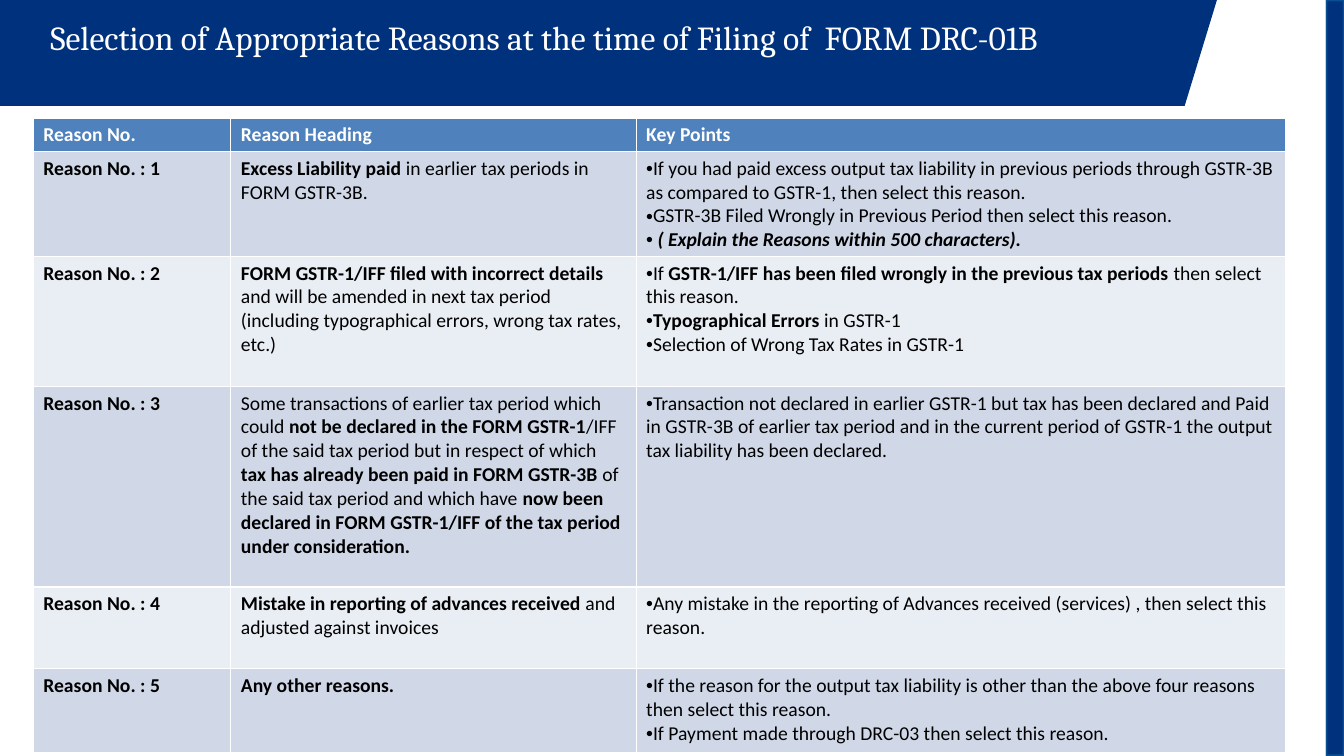
from lxml import etree
from pptx import Presentation
from pptx.dml.color import RGBColor
from pptx.enum.shapes import MSO_SHAPE
from pptx.enum.text import MSO_ANCHOR
from pptx.oxml.ns import qn
from pptx.util import Inches, Pt

RECTANGLE, FRAME = MSO_SHAPE.RECTANGLE, MSO_SHAPE.FRAME
TOP = MSO_ANCHOR.TOP

WHITE = RGBColor(0xFF, 0xFF, 0xFF)
BLACK = RGBColor(0, 0, 0)
NAVY = RGBColor(0x00, 0x31, 0x7C)
EDGE_BLUE = RGBColor(0x08, 0x50, 0x91)
HEADER_BLUE = RGBColor(0x4F, 0x81, 0xBD)
BANDS = (RGBColor(0xD0, 0xD8, 0xE8), RGBColor(0xE9, 0xED, 0xF4))

TITLE = "Selection of Appropriate Reasons at the time of Filing of  FORM DRC-01B"
HEADINGS = ("Reason No.", "Reason Heading", "Key Points")
COL_WIDTHS = (1.96, 4.02, 6.44)
ROW_HEIGHTS = (0.33, 1.04, 1.29, 1.99, 0.81, 0.83)


def bold(text, italic=False):
    return text, {"bold": True, "italic": italic}


# Each reason: runs of its heading, then its key points as lists of runs
REASONS = [
    ([bold("Excess Liability paid "), "in earlier tax periods in FORM GSTR-3B."],
     [["If you had paid excess output tax liability in previous periods through "
       "GSTR-3B as compared to GSTR-1, then select this reason."],
      ["GSTR-3B Filed Wrongly in Previous Period then select this reason."],
      [" ", bold("( Explain the Reasons within 500 characters).", italic=True)]]),
    ([bold("FORM GSTR-1/IFF filed with incorrect details "),
      "and will be amended in next tax period (including typographical errors, "
      "wrong tax rates, etc.)"],
     [["If ",
       bold("GSTR-1/IFF has been filed wrongly in the previous tax periods "),
       "then select this reason."],
      [bold("Typographical Errors"), " in GSTR-1"],
      ["Selection of Wrong Tax Rates in GSTR-1"]]),
    (["Some transactions of earlier tax period which could ",
      bold("not be declared in the FORM GSTR-1"),
      "/IFF of the said tax period but in respect of which ",
      bold("tax has already been paid in FORM GSTR-3B "),
      "of the said tax period and which have ",
      bold("now been declared in FORM GSTR-1/IFF of the tax period under "
           "consideration.")],
     [["Transaction not declared in earlier GSTR-1 but tax has been declared and "
       "Paid in GSTR-3B of earlier tax period and in the current period of GSTR-1 "
       "the output tax liability has been declared."]]),
    ([bold("Mistake in reporting of advances received "),
      "and adjusted against invoices"],
     [["Any mistake in the reporting of Advances received (services) , then "
       "select this reason."]]),
    ([bold("Any other reasons.")],
     [["If the reason for the output tax liability is other than the above four "
       "reasons then select this reason."],
      ["If Payment made through DRC-03 then select this reason."]]),
]


def write(tf, paragraphs, size=14, font="Calibri", color=BLACK, bullet=None):
    """Fill a text frame; a run is a string or a (string, format) pair."""
    for i, runs in enumerate(paragraphs):
        p = tf.paragraphs[0] if i == 0 else tf.add_paragraph()
        if bullet:
            p_pr = p._p.get_or_add_pPr()
            p_pr.set("marL", "0")
            p_pr.set("indent", "0")
            etree.SubElement(p_pr, qn("a:buFont"), typeface="Arial")
            etree.SubElement(p_pr, qn("a:buChar"), char=bullet)
        for run in runs:
            text, style = (run, {}) if isinstance(run, str) else run
            r = p.add_run()
            r.text = text
            r.font.name, r.font.size = font, Pt(size)
            r.font.color.rgb = color
            r.font.bold = style.get("bold", False)
            r.font.italic = style.get("italic", False)


def paint(sp, color):
    sp.shadow.inherit = False
    sp.fill.solid()
    sp.fill.fore_color.rgb = color
    sp.line.fill.background()


def add_banner(s, left, top, width, height):
    """Slanted title band with the slide title."""
    slant = 0.32
    outline = s.shapes.build_freeform(Inches(left + width), Inches(top))
    outline.add_line_segments([
        (Inches(left), Inches(top)),
        (Inches(left), Inches(top + height)),
        (Inches(left + width - slant), Inches(top + height)),
    ])
    paint(outline.convert_to_shape(), NAVY)

    box = s.shapes.add_textbox(Inches(left + 0.5), Inches(top + 0.17),
                               Inches(10.98), Inches(0.81))
    tf = box.text_frame
    tf.word_wrap = True
    tf.vertical_anchor = TOP
    tf.margin_left = tf.margin_right = tf.margin_top = tf.margin_bottom = 0
    write(tf, [[TITLE]], size=24, font="Cambria", color=WHITE)


def add_side_bar(s, left, top, width, height):
    box = [Inches(v) for v in (left, top, width, height)]
    paint(s.shapes.add_shape(RECTANGLE, *box), NAVY)
    edge = s.shapes.add_shape(FRAME, *box)
    edge.adjustments[0] = 0.08
    paint(edge, EDGE_BLUE)


def fill_cell(cell, background, paragraphs, **style):
    cell.fill.solid()
    cell.fill.fore_color.rgb = background
    write(cell.text_frame, paragraphs, **style)


def add_reason_table(s, left, top):
    table = s.shapes.add_table(
        len(ROW_HEIGHTS), len(COL_WIDTHS), Inches(left), Inches(top),
        Inches(sum(COL_WIDTHS)), Inches(sum(ROW_HEIGHTS))).table
    table.horz_banding = False
    for column, width in zip(table.columns, COL_WIDTHS):
        column.width = Inches(width)
    for row, height in zip(table.rows, ROW_HEIGHTS):
        row.height = Inches(height)

    for col, heading in enumerate(HEADINGS):
        fill_cell(table.cell(0, col), HEADER_BLUE, [[bold(heading)]], color=WHITE)
    for number, (heading, points) in enumerate(REASONS, 1):
        band = BANDS[(number - 1) % 2]
        fill_cell(table.cell(number, 0), band, [[bold(f"Reason No. : {number}")]])
        fill_cell(table.cell(number, 1), band, [heading])
        fill_cell(table.cell(number, 2), band, points, bullet="•")


def main():
    prs = Presentation()
    prs.slide_width, prs.slide_height = Inches(13.33), Inches(7.5)
    s = prs.slides.add_slide(prs.slide_layouts[6])
    add_banner(s, 0, 0, 12.07, 1.05)
    add_side_bar(s, 13.15, 0, 0.18, 7.5)
    add_reason_table(s, 0.33, 1.17)
    prs.save("out.pptx")


if __name__ == "__main__":
    main()
